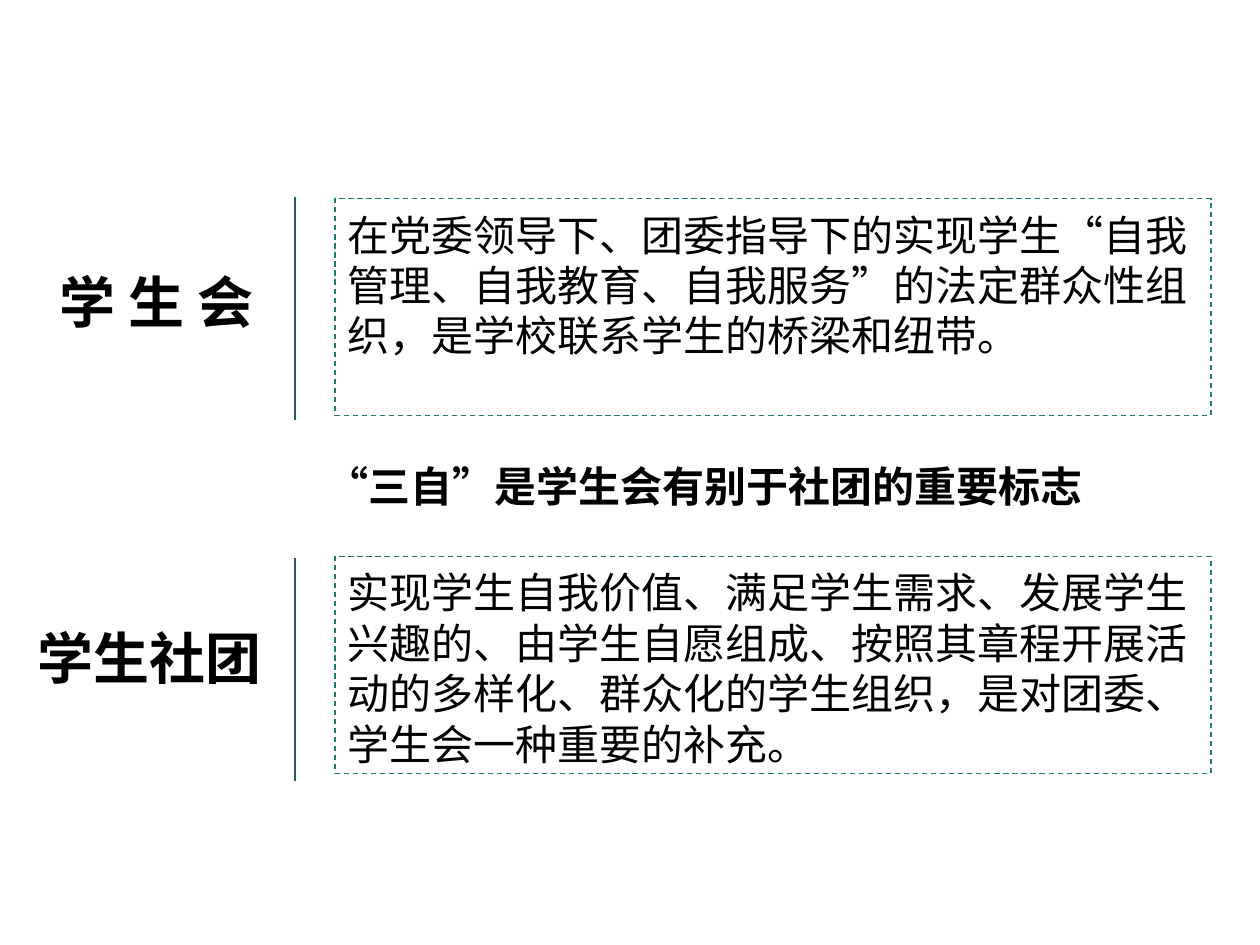
from lxml.etree import SubElement
from pptx import Presentation
from pptx.dml.color import RGBColor
from pptx.enum.dml import MSO_LINE
from pptx.enum.lang import MSO_LANGUAGE_ID
from pptx.enum.shapes import MSO_CONNECTOR, MSO_SHAPE
from pptx.enum.text import MSO_ANCHOR, PP_ALIGN
from pptx.oxml.ns import qn
from pptx.util import Pt

FONT = "Noto Sans CJK SC"
COLORS = {"text": "000000", "border": "1F7B77", "divider": "265F6C"}
GROUPS = [
    {
        "label": "学 生 会",
        "label_box": (16.5, 145.5, 146, 56),
        "body": "在党委领导下、团委指导下的实现学生“自我管理、自我教育、自我服务”的法定群众性组织，是学校联系学生的桥梁和纽带。",
        "body_top": 113.5,
        "divider_top": 112.5,
    },
    {
        "label": "学生社团 ",
        "label_box": (13, 349, 152, 56),
        "body": "实现学生自我价值、满足学生需求、发展学生兴趣的、由学生自愿组成、按照其章程开展活动的多样化、群众化的学生组织，是对团委、学生会一种重要的补充。",
        "body_top": 318,
        "divider_top": 319,
    },
]
NOTE = "“三自”是学生会有别于社团的重要标志"
NOTE_BOX = (101.5, 257, 602, 36)
BODY_LEFT, BODY_WIDTH, BODY_HEIGHT = 191.5, 500.5, 124
DIVIDER_LEFT, DIVIDER_HEIGHT = 168.5, 127.5
LINE_RATIO = 1.2


def color(name):
    """Return the named colour."""
    return RGBColor.from_string(COLORS[name])


def write(shape, text, size, top_margin, bold=False, alignment=PP_ALIGN.CENTER):
    """Fill a shape with one formatted paragraph."""
    frame = shape.text_frame
    frame.word_wrap = True
    frame.vertical_anchor = MSO_ANCHOR.TOP
    frame.margin_top = Pt(top_margin)
    paragraph = frame.paragraphs[0]
    paragraph.text = text
    paragraph.alignment = alignment
    paragraph.line_spacing = Pt(size * LINE_RATIO)
    for font in (paragraph.font, paragraph.runs[0].font):
        font.name = FONT
        font.size = Pt(size)
        font.bold = bold
        font.color.rgb = color("text")
        font.language_id = MSO_LANGUAGE_ID.SIMPLIFIED_CHINESE
    for properties in (paragraph._p.pPr.find(qn("a:defRPr")), paragraph.runs[0]._r.rPr):
        SubElement(properties, qn("a:ea")).set("typeface", FONT)


def add_text(slide, box, text, size, top_margin):
    """Add a bold centred text box."""
    shape = slide.shapes.add_textbox(*map(Pt, box))
    write(shape, text, size, top_margin, bold=True)


def add_body(slide, top, text):
    """Add a dashed box holding a description."""
    box = (BODY_LEFT, top, BODY_WIDTH, BODY_HEIGHT)
    shape = slide.shapes.add_shape(MSO_SHAPE.RECTANGLE, *map(Pt, box))
    shape.shadow.inherit = False
    shape.fill.background()
    shape.line.color.rgb = color("border")
    shape.line.width = Pt(0.75)
    shape.line.dash_style = MSO_LINE.DASH
    write(shape, text, 24, 6, alignment=PP_ALIGN.LEFT)


def add_divider(slide, top):
    """Add a vertical line between label and description."""
    ends = (DIVIDER_LEFT, top, DIVIDER_LEFT, top + DIVIDER_HEIGHT)
    line = slide.shapes.add_connector(MSO_CONNECTOR.STRAIGHT, *map(Pt, ends))
    line.line.color.rgb = color("divider")
    line.line.width = Pt(0.75)
    SubElement(line._element.spPr, qn("a:effectLst"))


def main():
    """Build and save the slide."""
    presentation = Presentation()
    presentation.slide_width, presentation.slide_height = Pt(720), Pt(540)
    slide = presentation.slides.add_slide(presentation.slide_layouts[6])
    for group in GROUPS:
        add_text(slide, group["label_box"], group["label"], 32, 7.2)
        add_body(slide, group["body_top"], group["body"])
        add_divider(slide, group["divider_top"])
    add_text(slide, NOTE_BOX, NOTE, 24, 6)
    presentation.save("out.pptx")


if __name__ == "__main__":
    main()
